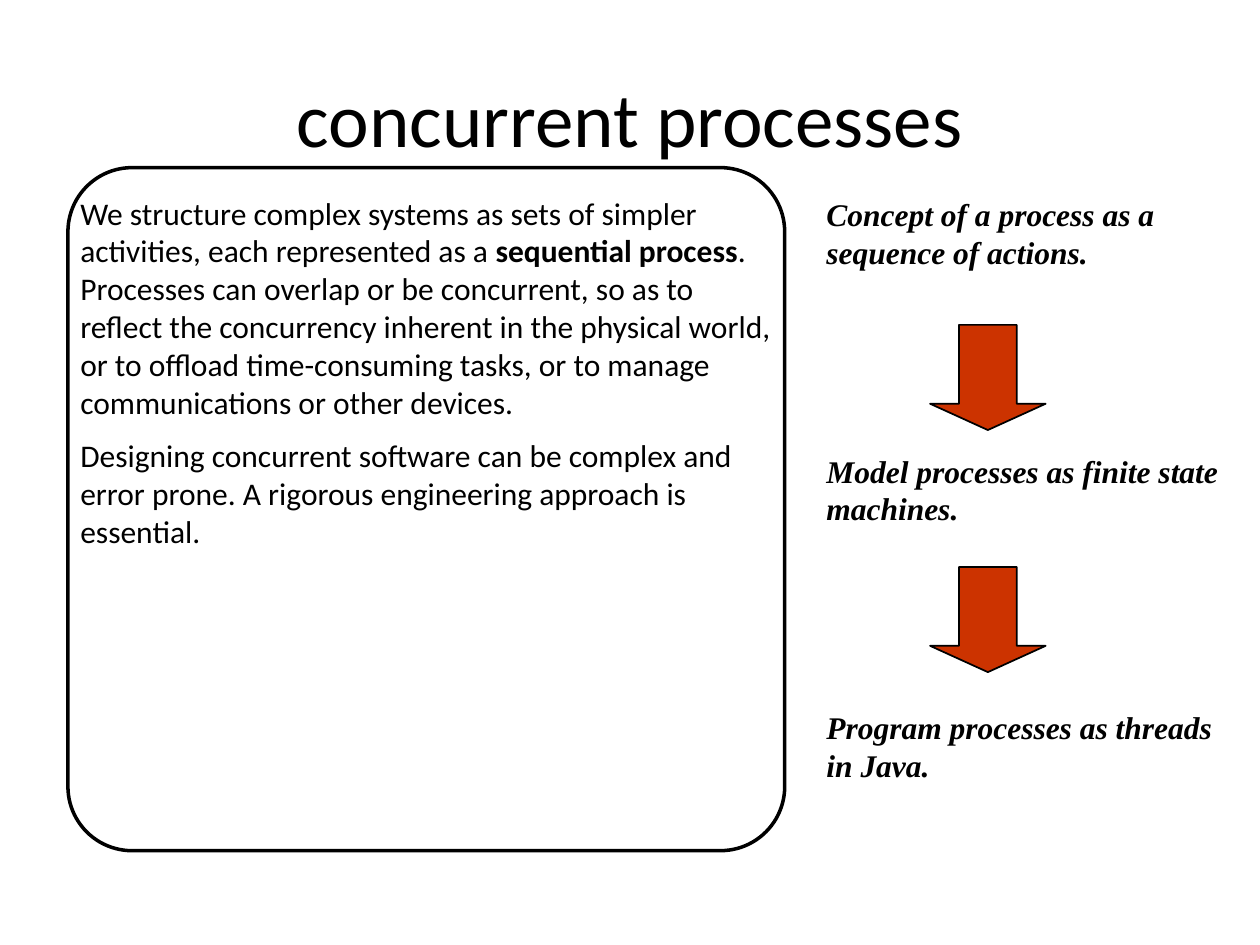
"""Build the slide on concurrent processes: an explanation beside a three-step flow."""
from pptx import Presentation
from pptx.dml.color import RGBColor
from pptx.enum.shapes import MSO_SHAPE
from pptx.enum.text import MSO_ANCHOR, MSO_AUTO_SIZE, PP_ALIGN
from pptx.util import Cm, Pt

BLACK = RGBColor(0x00, 0x00, 0x00)
WHITE = RGBColor(0xFF, 0xFF, 0xFF)
RED = RGBColor(0xCC, 0x33, 0x00)

HEADING = "concurrent processes"
EXPLANATION = [
    [
        ("We structure complex systems as sets of simpler activities, "
         "each represented as a ", False),
        ("sequential process", True),
        (". Processes can overlap or be concurrent, so as to reflect the "
         "concurrency inherent in the physical world, or to offload "
         "time-consuming tasks, or to manage communications or other devices.", False),
    ],
    [
        ("Designing concurrent software can be complex and error prone. "
         "A rigorous engineering approach is essential.", False),
    ],
]
STEPS = [
    "Concept of a process as a sequence of actions.",
    "Model processes as finite state machines.",
    "Program processes as threads in Java.",
]

PANEL_LEFT, PANEL_WIDTH = Cm(1.37), Cm(14.45)
STEP_TOP, STEP_PITCH = Cm(3.81), Cm(5.17)
ARROW_TOP, ARROW_PITCH = Cm(6.55), Cm(4.88)


def style_run(run, font_name, size, bold=False, italic=False):
    font = run.font
    font.name, font.size = font_name, Pt(size)
    font.bold, font.italic = bold, italic
    font.color.rgb = BLACK


def add_outlined(slide, preset, box, fill, line_width, adjustments):
    outlined = slide.shapes.add_shape(preset, *box)
    outlined.shadow.inherit = False
    outlined.fill.solid()
    outlined.fill.fore_color.rgb = fill
    outlined.line.color.rgb = BLACK
    outlined.line.width = Pt(line_width)
    for index, value in enumerate(adjustments):
        outlined.adjustments[index] = value
    return outlined


def add_text_frame(slide, box):
    frame = slide.shapes.add_textbox(*box).text_frame
    frame.word_wrap = True
    frame.auto_size = MSO_AUTO_SIZE.SHAPE_TO_FIT_TEXT
    return frame


def add_heading(slide):
    heading = slide.shapes.title
    heading.left, heading.top = Cm(1.27), Cm(0.76)
    heading.width, heading.height = Cm(22.86), Cm(3.18)
    heading.text_frame.text = HEADING
    heading.text_frame.vertical_anchor = MSO_ANCHOR.MIDDLE
    paragraph = heading.text_frame.paragraphs[0]
    paragraph.alignment = PP_ALIGN.CENTER
    style_run(paragraph.runs[0], "Calibri", 44)


def add_explanation(slide):
    panel = add_outlined(slide, MSO_SHAPE.ROUNDED_RECTANGLE,
                         (PANEL_LEFT, Cm(3.38), PANEL_WIDTH, Cm(13.77)), WHITE, 2, [0.094])
    slide.shapes.title.element.addprevious(panel.element)
    frame = add_text_frame(slide, (PANEL_LEFT, Cm(3.78), PANEL_WIDTH, Cm(7.57)))
    for index, passages in enumerate(EXPLANATION):
        paragraph = frame.add_paragraph() if index else frame.paragraphs[0]
        paragraph.space_before = Pt(9 if index else 0)
        for wording, bold in passages:
            run = paragraph.add_run()
            run.text = wording
            style_run(run, "Calibri", 18, bold)


def add_flow(slide):
    for index, step in enumerate(STEPS):
        frame = add_text_frame(
            slide, (Cm(16.41), STEP_TOP + index * STEP_PITCH, Cm(8.41), Cm(1.8)))
        frame.text = step
        style_run(frame.paragraphs[0].runs[0], "Times New Roman", 18, bold=True, italic=True)
    for index in range(len(STEPS) - 1):
        add_outlined(slide, MSO_SHAPE.DOWN_ARROW,
                     (Cm(18.75), ARROW_TOP + index * ARROW_PITCH, Cm(2.33), Cm(2.12)),
                     RED, 1, [0.5, 0.25])


def main():
    presentation = Presentation()
    presentation.slide_width, presentation.slide_height = Cm(25.4), Cm(19.05)
    slide = presentation.slides.add_slide(presentation.slide_layouts.get_by_name("Title Only"))
    add_heading(slide)
    add_explanation(slide)
    add_flow(slide)
    presentation.save("out.pptx")


if __name__ == "__main__":
    main()
